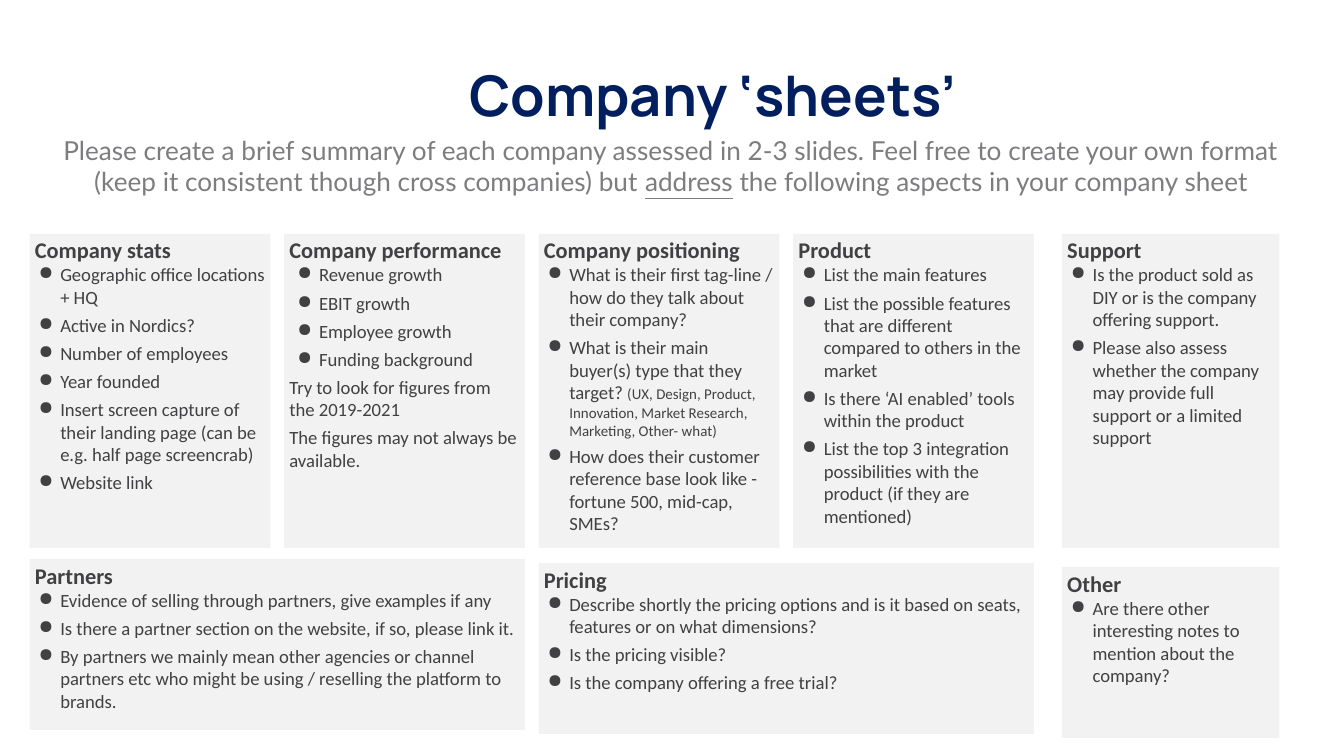
import pptx
import pptx.util
import pptx.dml.color
import pptx.enum.shapes
import pptx.enum.text
import pptx.oxml.ns
import lxml.etree

Cm, Pt = pptx.util.Cm, pptx.util.Pt
ALIGN = pptx.enum.text.PP_ALIGN

COLORS = {"title": "011F5E", "intro": "7E7C7F", "text": "414042", "panel": "F2F2F2"}

TITLE = "Company ‘sheets’"
INTRO = [
    "Please create a brief summary of each company assessed in 2-3 slides. "
    "Feel free to create your own format (keep it consistent though cross companies) but ",
    "address",
    " the following aspects in your company sheet",
]

# Heading, bullets (a tuple holds text and its fine print), plain notes
TOP = [
    ("Company stats", [
        "Geographic office locations + HQ",
        "Active in Nordics?",
        "Number of employees",
        "Year founded",
        "Insert screen capture of their landing page (can be e.g. half page screencrab)",
        "Website link",
    ], []),
    ("Company performance", [
        "Revenue growth",
        "EBIT growth",
        "Employee growth",
        "Funding background",
    ], [
        "Try to look for figures from the 2019-2021",
        "The figures may not always be available.",
    ]),
    ("Company positioning", [
        "What is their first tag-line / how do they talk about their company?",
        ("What is their main buyer(s) type that they target? ",
         "(UX, Design, Product, Innovation, Market Research, Marketing, Other- what)"),
        "How does their customer reference base look like - fortune 500, mid-cap, SMEs?",
    ], []),
    ("Product", [
        "List the main features",
        "List the possible features that are different compared to others in the market",
        "Is there ‘AI enabled’ tools within the product",
        "List the top 3 integration possibilities with the product (if they are mentioned)",
    ], []),
    ("Support", [
        "Is the product sold as DIY or is the company offering support.",
        "Please also assess whether the company may provide full support or a limited support",
    ], []),
]
LOW = [
    ("Partners", [
        "Evidence of selling through partners, give examples if any",
        "Is there a partner section on the website, if so, please link it.",
        "By partners we mainly mean other agencies or channel partners etc "
        "who might be using / reselling the platform to brands.",
    ], []),
    ("Pricing", [
        "Describe shortly the pricing options and is it based on seats, "
        "features or on what dimensions?",
        "Is the pricing visible?",
        "Is the company offering a free trial?",
    ], []),
    ("Other", ["Are there other interesting notes to mention about the company?"], []),
]

# Layout in centimetres
LEFT, WIDTH, PITCH = 0.56, 4.55, 4.81
SIDE, NARROW = 20.07, 4.11
TOP_Y, TOP_H = 4.42, 5.94
LOW_Y, LOW_H, STEP = 10.57, 3.23, 0.075
HANG = 0.41


def paint(font, name, size, color, bold=False):
    font.name, font.size, font.bold = name, Pt(size), bold
    font.color.rgb = pptx.dml.color.RGBColor.from_string(COLORS[color])


def frame(shape):
    """Set wrapping, anchor and margins, and return the text frame."""
    text = shape.text_frame
    text.word_wrap = True
    text.vertical_anchor = pptx.enum.text.MSO_ANCHOR.TOP
    text.margin_left = text.margin_right = Cm(0.1)
    text.margin_top = text.margin_bottom = Cm(0.05)
    return text


def label(slide, box, parts, style):
    text = frame(slide.shapes.add_textbox(*map(Cm, box)))
    para = text.paragraphs[0]
    para.alignment = ALIGN.CENTER
    paint(para.font, *style)
    for part in parts:
        para.add_run().text = part
    return para


def bullet(para, indent):
    props = para._p.get_or_add_pPr()
    props.set("marL", str(Cm(indent)))
    props.set("indent", str(-Cm(HANG)))
    qn = pptx.oxml.ns.qn
    color = lxml.etree.SubElement(props, qn("a:buClr"))
    lxml.etree.SubElement(color, qn("a:srgbClr"), val=COLORS["text"])
    lxml.etree.SubElement(props, qn("a:buChar"), char="●")


def panel(slide, box, head, items, notes):
    rect = pptx.enum.shapes.MSO_SHAPE.RECTANGLE
    shape = slide.shapes.add_shape(rect, *map(Cm, box))
    shape.shadow.inherit = False
    shape.fill.solid()
    shape.fill.fore_color.rgb = pptx.dml.color.RGBColor.from_string(COLORS["panel"])
    shape.line.fill.background()
    text = frame(shape)

    para = text.paragraphs[0]
    para.alignment = ALIGN.LEFT
    para.add_run().text = head
    paint(para.font, "Calibri", 12, "text", True)

    indent = 0.56 if notes else 0.48
    for i, item in enumerate(items + notes):
        para = text.add_paragraph()
        para.alignment = ALIGN.LEFT
        para.space_before = Pt(3 if i else 0)
        if i < len(items):
            bullet(para, indent)
        paint(para.font, "Calibri", 10, "text")
        main, *fine = item if isinstance(item, tuple) else (item,)
        para.add_run().text = main
        for small in fine:
            run = para.add_run()
            run.text = small
            run.font.size = Pt(8)
    para.space_after = Pt(3)


def main():
    deck = pptx.Presentation()
    deck.slide_width, deck.slide_height = Cm(25.4), Cm(14.29)
    slide = deck.slides.add_slide(deck.slide_layouts[6])

    label(slide, (6.58, 1.09, 13.79, 1.37), [TITLE], ("Manrope", 30, "title", True))
    intro = label(slide, (0.76, 2.49, 23.85, 1.3), INTRO, ("Lato", 14, "intro"))
    intro.runs[1].font.underline = True

    for i, block in enumerate(TOP):
        last = i == len(TOP) - 1
        x, w = (SIDE, NARROW) if last else (LEFT + i * PITCH, WIDTH)
        panel(slide, (x, TOP_Y, w, TOP_H), *block)

    for i, block in enumerate(LOW):
        last = i == len(LOW) - 1
        x, w = (SIDE, NARROW) if last else (LEFT + 2 * i * PITCH, PITCH + WIDTH)
        panel(slide, (x, LOW_Y + i * STEP, w, LOW_H), *block)

    deck.save("out.pptx")


if __name__ == "__main__":
    main()
